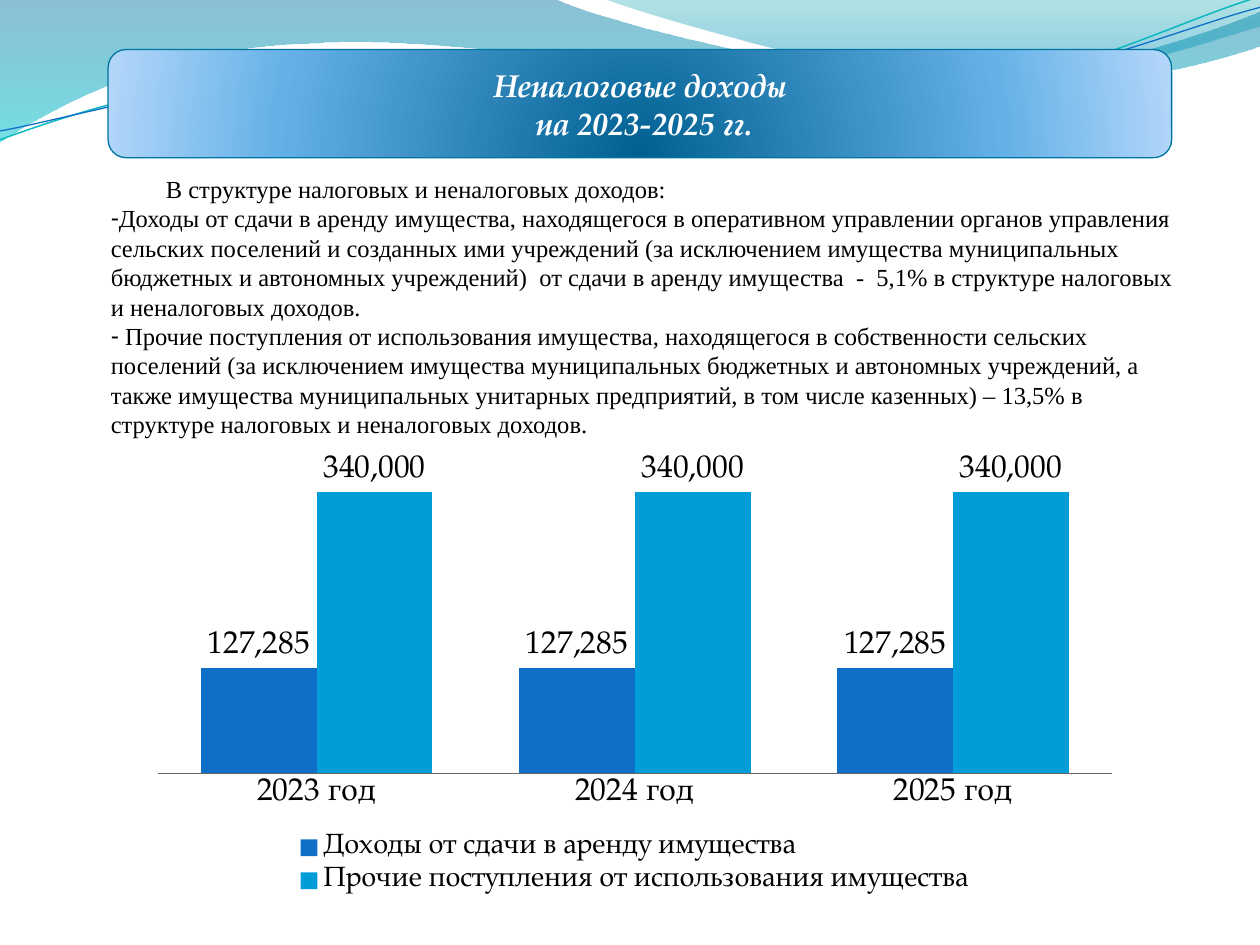
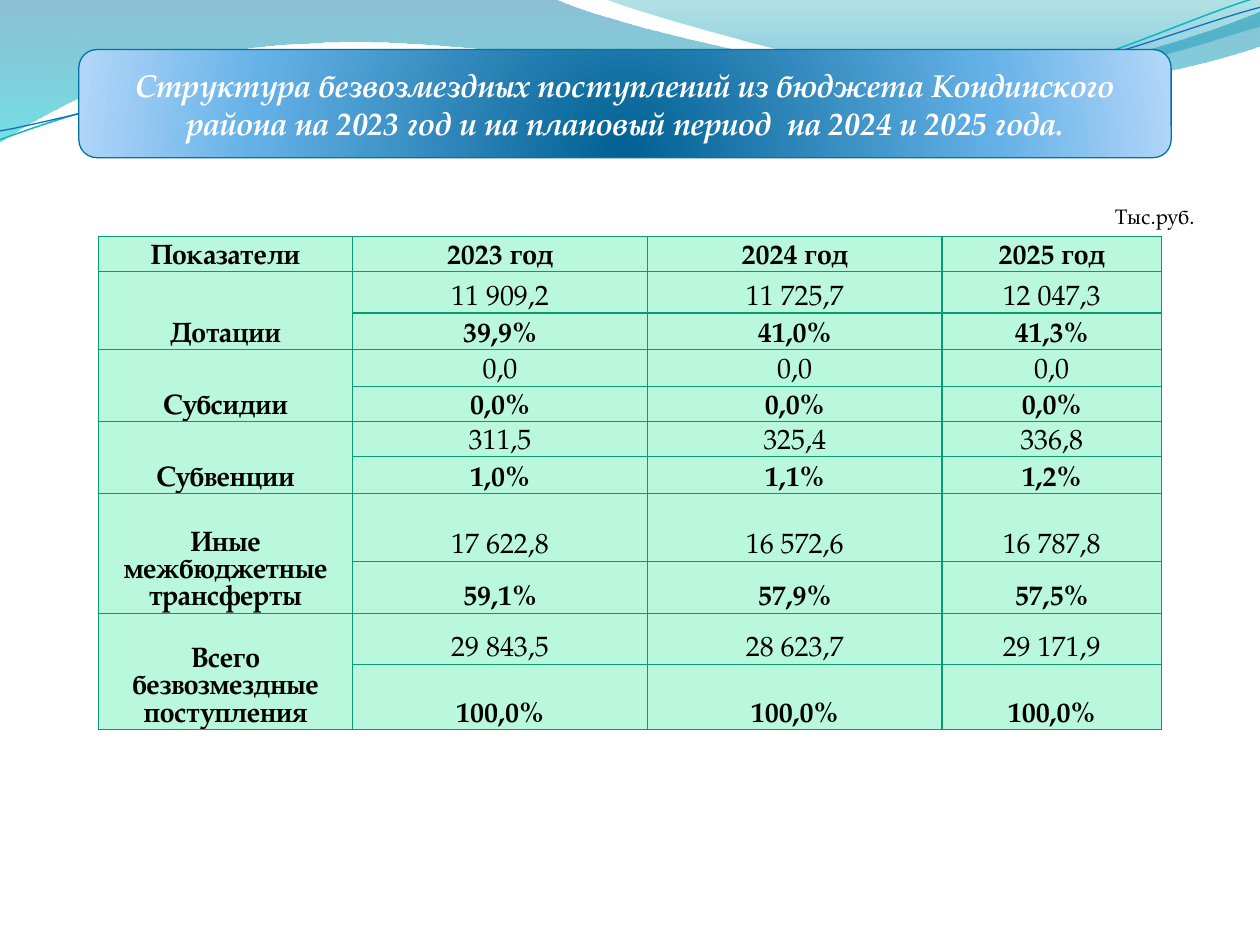
from dataclasses import dataclass
from typing import Any, Optional

import lxml.etree
import pptx
import pptx.chart.data
import pptx.dml.color
import pptx.enum.chart
import pptx.enum.shapes
import pptx.enum.text
import pptx.oxml.ns
import pptx.util

Cm = pptx.util.Cm
Pt = pptx.util.Pt
qn = pptx.oxml.ns.qn
Point = tuple[float, float]
Stop = tuple[int, str, int]  # position %, colour, opacity %
CENTER = pptx.enum.text.PP_ALIGN.CENTER

# Shared style
SERIF = "TeX Gyre Pagella"
BODY_FONT = "Times New Roman"
BLACK, WHITE = "000000", "FFFFFF"
BLUE, SKY, TURQUOISE = "0F6FC6", "009DD9", "0AB8BF"
BANNER_LINE, AXIS_LINE = "0074A1", "666666"
CELL_FILL, CELL_LINE = "BAF8DE", "0A9B74"
BANNER_STOPS: list[Stop] = [(0, "006091", 100), (68, "64B1E7", 100), (100, "B1D6F9", 100)]
BANNER_TOP, BANNER_HEIGHT = 1.0, 2.18


@dataclass
class Wave:
    """A curve in centimetres: one point per straight step, three per Bezier step."""
    start: Point
    steps: list[tuple[Point, ...]]
    stops: Optional[list[Stop]] = None
    line: str = ""
    width: float = 0.75


@dataclass
class Indicator:
    name: str
    amounts: list[str]
    shares: list[str]


WAVES = [
    Wave((0, 0), [
        ((11.18, -0.03),),
        ((12.09, 0.43), (16.87, 1.6), (19.25, 1.6)),
        ((21.67, 1.6), (24.33, 0.66), (25.4, 0.23)),
        ((25.43, 0.91),),
        ((24.97, 1.12), (22.1, 1.93), (18.95, 1.91)),
        ((15.8, 1.91), (9.7, 0.71), (6.53, 0.86)),
        ((3.28, 0.91), (1.17, 2.11), (-0.03, 2.87)),
        ((0, 0),),
    ], stops=[(0, "0074A1", 45), (100, "00C6CF", 55)]),
    Wave((12.17, -0.03), [
        ((12.93, 0.28), (17.32, 1.57), (19.53, 1.65)),
        ((21.74, 1.75), (24.41, 0.81), (25.4, 0.53)),
        ((25.4, 0),),
        ((12.17, -0.03),),
    ], stops=[(0, "00A1A9", 30), (80, "008BBF", 45)]),
    Wave((0, 2.82), [
        ((1.22, 2.36), (4.01, 1.45), (7.04, 1.32)),
        ((10.03, 1.19), (15.06, 2.26), (18.11, 2.03)),
        ((21.16, 1.8), (23.83, 0.38), (25.35, -0.05)),
    ], line=TURQUOISE, width=0.85),
    Wave((0, 2.64), [
        ((1.19, 2.44), (4.17, 1.55), (7.19, 1.42)),
        ((10.24, 1.3), (15.16, 2.13), (18.21, 1.91)),
        ((21.23, 1.7), (23.9, 0.53), (25.4, 0.15)),
    ], line=BLUE),
]

# Content
INCOME_INTRO = "В структуре налоговых и неналоговых доходов:"
INCOME_ITEMS = [
    "Доходы от сдачи в аренду имущества, находящегося в оперативном управлении органов "
    "управления сельских поселений и созданных ими учреждений (за исключением имущества "
    "муниципальных бюджетных и автономных учреждений)  от сдачи в аренду имущества  -  5,1% "
    "в структуре налоговых и неналоговых доходов.",
    " Прочие поступления от использования имущества, находящегося в собственности сельских "
    "поселений (за исключением имущества муниципальных бюджетных и автономных учреждений, а "
    "также имущества муниципальных унитарных предприятий, в том числе казенных) – 13,5% в "
    "структуре налоговых и неналоговых доходов.",
]
YEARS = ["2023 год", "2024 год", "2025 год"]
INCOME_SERIES = [
    ("Доходы от сдачи в аренду имущества", 127285, BLUE),
    ("Прочие поступления от использования имущества", 340000, SKY),
]
INDICATORS = [
    Indicator("Дотации", ["11 909,2", "11 725,7", "12 047,3"], ["39,9%", "41,0%", "41,3%"]),
    Indicator("Субсидии", ["0,0"] * 3, ["0,0%"] * 3),
    Indicator("Субвенции", ["311,5", "325,4", "336,8"], ["1,0%", "1,1%", "1,2%"]),
    Indicator("Иные межбюджетные трансферты", ["17 622,8", "16 572,6", "16 787,8"],
              ["59,1%", "57,9%", "57,5%"]),
    Indicator("Всего безвозмездные поступления", ["29 843,5", "28 623,7", "29 171,9"],
              ["100,0%"] * 3),
]
COLUMN_WIDTHS = [5.13, 5.94, 5.94, 4.42]
ROW_HEIGHTS = [0.71, 0.84, 0.74, 0.74, 0.71, 0.71, 0.74, 1.37, 1.04, 1.04, 1.3]


# Helpers
def color(value: str) -> pptx.dml.color.RGBColor:
    return pptx.dml.color.RGBColor.from_string(value)


def format_font(font: Any, size: float, name: str = SERIF, fill: str = BLACK,
                bold: bool = False, italic: bool = False) -> None:
    font.size, font.name, font.bold, font.italic = Pt(size), name, bold, italic
    font.color.rgb = color(fill)


def write_text(paragraph: Any, text: str, *, size: float, alignment: Any = None,
               **font_format: Any) -> None:
    run = paragraph.add_run()
    run.text = text
    format_font(run.font, size, **font_format)
    paragraph.alignment = alignment
    paragraph.space_before = Pt(0)


def add_xml(parent: Any, tag: str, **attributes: Any) -> Any:
    return lxml.etree.SubElement(
        parent, qn(tag), {key: str(value) for key, value in attributes.items()})


def add_color(parent: Any, value: str, opacity: int = 100) -> None:
    element = add_xml(parent, "a:srgbClr", val=value)
    if opacity < 100:
        add_xml(element, "a:alpha", val=opacity * 1000)


def set_gradient(shape: Any, stops: list[Stop], radial: bool = False) -> None:
    shape.fill.gradient()
    gradient = shape.element.spPr.find(qn("a:gradFill"))
    gradient.clear()
    stop_list = add_xml(gradient, "a:gsLst")
    for position, value, opacity in stops:
        add_color(add_xml(stop_list, "a:gs", pos=position * 1000), value, opacity)
    if radial:
        circle = add_xml(gradient, "a:path", path="circle")
        add_xml(circle, "a:fillToRect", l=50000, t=130000, r=50000, b=-30000)
    else:
        add_xml(gradient, "a:lin", ang=5400000, scaled=1)


def place(shape: Any, left: float, top: float, width: float, height: float) -> None:
    shape.left, shape.top, shape.width, shape.height = map(Cm, (left, top, width, height))


# Shared slide parts
def bend_segments(shape: Any, wave: Wave) -> None:
    """Join the three straight lines of each Bezier step into one curve."""
    lines = iter(list(shape.element.iter(qn("a:lnTo"))))
    for step in wave.steps:
        first, *others = [next(lines) for _ in step]
        if others:
            curve = lxml.etree.Element(qn("a:cubicBezTo"))
            first.addprevious(curve)
            for line in (first, *others):
                curve.append(line[0])
                line.getparent().remove(line)


def draw_wave(slide: Any, wave: Wave) -> Any:
    builder = slide.shapes.build_freeform(*map(Cm, wave.start))
    points = [(Cm(x), Cm(y)) for step in wave.steps for x, y in step]
    builder.add_line_segments(points, close=wave.stops is not None)
    shape = builder.convert_to_shape()
    bend_segments(shape, wave)
    shape.shadow.inherit = False
    if wave.stops:
        set_gradient(shape, wave.stops)
        shape.line.fill.background()
    else:
        shape.fill.background()
        shape.line.color.rgb = color(wave.line)
        shape.line.width = Pt(wave.width)
    return shape


def move_waves_to_master(presentation: Any, slide: Any) -> None:
    tree = presentation.slide_master.shapes.element
    for index, wave in enumerate(WAVES):
        element = draw_wave(slide, wave).element
        element.nvSpPr.cNvPr.set("id", str(100 + index))
        tree.insert(2 + index, element)  # behind the placeholders


def draw_banner(slide: Any, lines: list[str], left: float, width: float) -> None:
    banner = slide.shapes.add_shape(
        pptx.enum.shapes.MSO_SHAPE.ROUNDED_RECTANGLE,
        Cm(left), Cm(BANNER_TOP), Cm(width), Cm(BANNER_HEIGHT))
    banner.shadow.inherit = False
    set_gradient(banner, BANNER_STOPS, radial=True)
    banner.line.color.rgb = color(BANNER_LINE)
    banner.line.width = Pt(0.75)

    title = slide.shapes.title
    slide.shapes.element.append(title.element)  # in front of the banner
    place(title, left, BANNER_TOP, width, BANNER_HEIGHT)
    frame = title.text_frame
    frame.auto_size = pptx.enum.text.MSO_AUTO_SIZE.NONE
    frame.vertical_anchor = pptx.enum.text.MSO_ANCHOR.MIDDLE
    for index, line in enumerate(lines):
        paragraph = frame.add_paragraph() if index else frame.paragraphs[0]
        write_text(paragraph, line, size=18, fill=WHITE, bold=True, italic=True,
                   alignment=CENTER)


def add_slide(presentation: Any, layout: int, title: list[str], left: float,
              width: float) -> Any:
    slide = presentation.slides.add_slide(presentation.slide_layouts[layout])
    draw_banner(slide, title, left, width)
    return slide


# Slide 1: non-tax income
def fill_income_list(body: Any) -> None:
    place(body, 1.98, 3.38, 22.23, 5.64)
    frame = body.text_frame
    frame.auto_size = pptx.enum.text.MSO_AUTO_SIZE.NONE
    for index, text in enumerate([INCOME_INTRO, *INCOME_ITEMS]):
        paragraph = frame.add_paragraph() if index else frame.paragraphs[0]
        write_text(paragraph, text, size=14, name=BODY_FONT)
        properties = paragraph._p.get_or_add_pPr()
        properties.set("marL", "0")
        properties.set("indent", "0" if index else str(Cm(1.11)))
        if index:
            add_xml(properties, "a:buChar", char="-")
        else:
            add_xml(properties, "a:buNone")


def draw_income_chart(slide: Any) -> None:
    data = pptx.chart.data.CategoryChartData(number_format="#,##0")
    data.categories = YEARS
    for name, value, _ in INCOME_SERIES:
        data.add_series(name, [value] * len(YEARS))
    chart = slide.shapes.add_chart(
        pptx.enum.chart.XL_CHART_TYPE.COLUMN_CLUSTERED,
        Cm(2.78), Cm(8.73), Cm(20.04), Cm(9.42), data).chart
    format_font(chart.font, 18)
    chart.has_title = False
    chart.has_legend = True
    chart.legend.position = pptx.enum.chart.XL_LEGEND_POSITION.BOTTOM
    chart.legend.include_in_layout = False
    format_font(chart.legend.font, 16)

    category_axis, value_axis = chart.category_axis, chart.value_axis
    category_axis.major_tick_mark = pptx.enum.chart.XL_TICK_MARK.NONE
    category_axis.format.line.color.rgb = color(AXIS_LINE)
    category_axis.format.line.width = Pt(0.5)
    value_axis.visible = value_axis.has_major_gridlines = False
    value_axis.minimum_scale, value_axis.maximum_scale = 0, 400000

    plot = chart.plots[0]
    plot.gap_width, plot.overlap, plot.vary_by_categories = 75, 0, False
    for series, (_, _, fill) in zip(plot.series, INCOME_SERIES):
        series.format.fill.solid()
        series.format.fill.fore_color.rgb = color(fill)
        labels = series.data_labels
        labels.show_value = True
        labels.number_format, labels.number_format_is_linked = "#,##0", False
        labels.position = pptx.enum.chart.XL_LABEL_POSITION.OUTSIDE_END
        format_font(labels.font, 18)


# Slide 2: transfers table
def fill_cell(cell: Any, text: str, bold: bool) -> None:
    cell.margin_left = cell.margin_right = cell.margin_top = Cm(0.03)
    cell.margin_bottom = Cm(0)
    cell.vertical_anchor = pptx.enum.text.MSO_ANCHOR.BOTTOM
    properties = cell._tc.get_or_add_tcPr()
    for side in ("L", "R", "T", "B"):
        border = add_xml(properties, f"a:ln{side}", w=Pt(0.75))
        add_color(add_xml(border, "a:solidFill"), CELL_LINE)
    cell.fill.solid()
    cell.fill.fore_color.rgb = color(CELL_FILL)
    if text:
        write_text(cell.text_frame.paragraphs[0], text, size=16, bold=bold,
                   alignment=CENTER)


def draw_transfers_table(slide: Any) -> None:
    rows = [["Показатели", *YEARS]]
    for indicator in INDICATORS:
        rows += [[indicator.name, *indicator.amounts], ["", *indicator.shares]]
    table = slide.shapes.add_table(
        len(rows), len(COLUMN_WIDTHS), Cm(1.98), Cm(4.76),
        Cm(sum(COLUMN_WIDTHS)), Cm(sum(ROW_HEIGHTS))).table
    table.first_row = table.horz_banding = False
    for column, width in zip(table.columns, COLUMN_WIDTHS):
        column.width = Cm(width)
    for row_index, (texts, height) in enumerate(zip(rows, ROW_HEIGHTS)):
        table.rows[row_index].height = Cm(height)
        for column_index, text in enumerate(texts):
            is_amount = column_index > 0 and row_index % 2 == 1
            fill_cell(table.cell(row_index, column_index), text, bold=not is_amount)
    for row_index in range(1, len(rows), 2):
        table.cell(row_index, 0).merge(table.cell(row_index + 1, 0))


def draw_unit_label(slide: Any) -> None:
    label = slide.shapes.add_textbox(Cm(22.23), Cm(3.97), Cm(2.13), Cm(0.76))
    label.text_frame.word_wrap = False
    write_text(label.text_frame.paragraphs[0], "Тыс.руб.", size=12)


def main() -> None:
    presentation = pptx.Presentation()
    presentation.slide_width, presentation.slide_height = Cm(25.4), Cm(19.05)

    income = add_slide(presentation, 1, ["Неналоговые доходы", " на 2023-2025 гг."], 2.18, 21.44)
    move_waves_to_master(presentation, income)
    draw_income_chart(income)
    fill_income_list(income.placeholders[1])

    transfers = add_slide(presentation, 5, [
        "Структура безвозмездных поступлений из бюджета Кондинского района "
        "на 2023 год и на плановый период  на 2024 и 2025 года."], 1.59, 22.02)
    draw_transfers_table(transfers)
    draw_unit_label(transfers)

    presentation.save("out.pptx")


if __name__ == "__main__":
    main()
